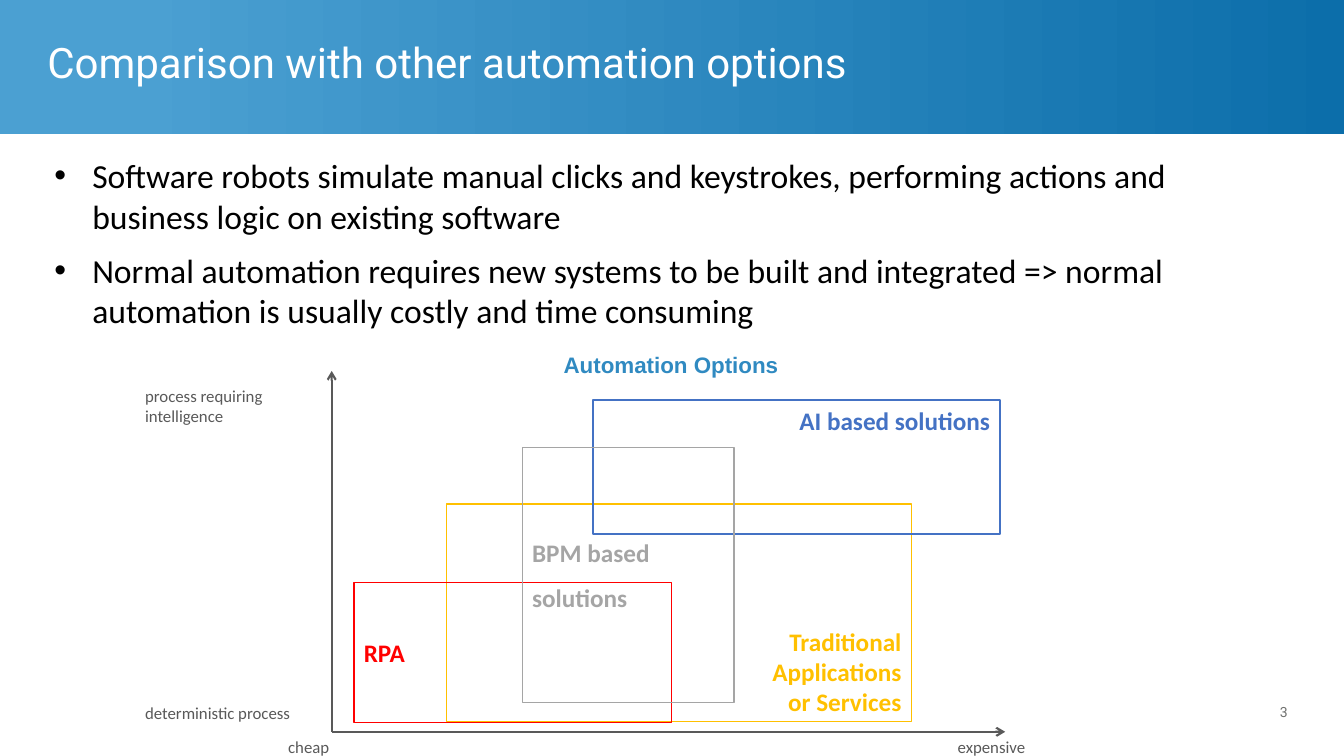
from dataclasses import dataclass

from lxml import etree
from pptx import Presentation
from pptx.dml.color import RGBColor
from pptx.enum import shapes, text
from pptx.oxml import ns
from pptx.util import Inches, Pt

WHITE, BLACK, GREY = "FFFFFF", "000000", "595959"
LEFT, CENTER, RIGHT = text.PP_ALIGN.LEFT, text.PP_ALIGN.CENTER, text.PP_ALIGN.RIGHT
TOP, MIDDLE, BOTTOM = text.MSO_ANCHOR.TOP, text.MSO_ANCHOR.MIDDLE, text.MSO_ANCHOR.BOTTOM
ORIGIN = (3.29, 7.26)


@dataclass
class Label:
    text: str
    box: tuple[float, float, float, float]
    size: int = 12
    color: str = GREY
    font: str = "Calibri"
    bold: bool = False
    align: text.PP_ALIGN = LEFT
    anchor: text.MSO_ANCHOR = TOP
    wrap: bool = False


@dataclass
class Option:
    text: str
    box: tuple[float, float, float, float]
    color: str
    align: text.PP_ALIGN
    anchor: text.MSO_ANCHOR


OPTIONS = [
    Option("Traditional\nApplications\nor Services", (4.43, 5, 4.61, 2.16), "FFC000", RIGHT, BOTTOM),
    Option("AI based solutions", (5.88, 3.97, 4.04, 1.33), "4472C4", RIGHT, TOP),
    Option("RPA", (3.51, 5.78, 3.15, 1.39), "FF0000", LEFT, MIDDLE),
    Option("BPM based\nsolutions", (5.18, 4.44, 2.1, 2.53), "A5A5A5", LEFT, MIDDLE),
]

LABELS = [
    Label("Automation Options", (5.48, 3.43, 2.35, 0.37), 16, "308AC1", "Arial", True, CENTER),
    Label("expensive", (9.4, 7.26, 1.05, 0.36)),
    Label("cheap", (2.76, 7.26, 0.73, 0.36)),
    Label("deterministic process", (1.34, 6.92, 2.05, 0.36), wrap=True),
    Label("process requiring intelligence", (1.34, 3.78, 2.05, 0.6), wrap=True),
    Label("3", (9.87, 6.86, 3, 0.4), 10, "6F706E", "Roboto", align=RIGHT, anchor=MIDDLE, wrap=True),
]

BULLETS = [
    "Software robots simulate manual clicks and keystrokes, performing actions and "
    "business logic on existing software",
    "Normal automation requires new systems to be built and integrated => normal "
    "automation is usually costly and time consuming",
]


def rgb(color: str) -> RGBColor:
    return RGBColor.from_string(color)


def place(shape, box: tuple[float, float, float, float]) -> None:
    shape.left, shape.top, shape.width, shape.height = map(Inches, box)


def write(shape, content: str, size: int, color: str, font: str = "Calibri",
          bold: bool = False, align: text.PP_ALIGN = LEFT,
          anchor: text.MSO_ANCHOR = TOP, wrap: bool = True) -> None:
    """Fill the shape with text, one paragraph per line, all in one style."""
    frame = shape.text_frame
    frame.text = content
    frame.word_wrap = wrap
    frame.auto_size = text.MSO_AUTO_SIZE.NONE
    frame.vertical_anchor = anchor
    for paragraph in frame.paragraphs:
        paragraph.alignment = align
        for run in paragraph.runs:
            run.font.name, run.font.size, run.font.bold = font, Pt(size), bold
            run.font.color.rgb = rgb(color)


def add_rectangle(slide, box: tuple[float, float, float, float]):
    rectangle = slide.shapes.add_shape(shapes.MSO_SHAPE.RECTANGLE, *map(Inches, box))
    rectangle.shadow.inherit = False
    return rectangle


def add_banner(slide) -> None:
    banner = add_rectangle(slide, (0, 0, 13.33, 1.33))
    banner.line.fill.background()
    banner.fill.gradient()
    banner.fill.gradient_angle = 0
    stops = [(0.1, "4BA0D2"), (1, "0C6EAA")]
    for stop, (position, color) in zip(banner.fill.gradient_stops, stops):
        stop.position = position
        stop.color.rgb = rgb(color)
    slide.shapes._spTree.insert(2, banner._element)  # behind the title


def add_option(slide, option: Option) -> None:
    rectangle = add_rectangle(slide, option.box)
    rectangle.fill.background()
    rectangle.line.color.rgb = rgb(option.color)
    rectangle.line.width = Pt(1)
    write(rectangle, option.text, 18, option.color, bold=True,
          align=option.align, anchor=option.anchor)


def add_axis(slide, end: tuple[float, float]) -> None:
    axis = slide.shapes.add_connector(
        shapes.MSO_CONNECTOR.STRAIGHT, *map(Inches, ORIGIN + end))
    axis.line.color.rgb = rgb(GREY)
    axis.line.width = Pt(1.5)
    etree.SubElement(axis.line._get_or_add_ln(), ns.qn("a:tailEnd"), type="arrow")
    etree.SubElement(axis._element.spPr, ns.qn("a:effectLst"))


def add_label(slide, label: Label) -> None:
    box = slide.shapes.add_textbox(*map(Inches, label.box))
    write(box, label.text, label.size, label.color, label.font, label.bold,
          label.align, label.anchor, label.wrap)


def main() -> None:
    presentation = Presentation()
    presentation.slide_width, presentation.slide_height = Inches(13.33), Inches(7.5)
    slide = presentation.slides.add_slide(presentation.slide_layouts[1])
    add_banner(slide)

    title, body = slide.shapes.title, slide.placeholders[1]
    place(title, (0.37, 0.02, 12.5, 1.24))
    write(title, "Comparison with other automation options", 30, WHITE, "Roboto", anchor=MIDDLE)
    title.text_frame.paragraphs[0].line_spacing = 0.9
    place(body, (0.44, 1.49, 12.44, 5.75))
    write(body, "\n".join(BULLETS), 24, BLACK)
    for paragraph in body.text_frame.paragraphs:
        paragraph.space_before = Pt(10)

    traditional, *other_options = OPTIONS
    add_option(slide, traditional)
    for end in [(ORIGIN[0], 3.68), (9.97, ORIGIN[1])]:
        add_axis(slide, end)
    for label in LABELS:
        add_label(slide, label)
    for option in other_options:
        add_option(slide, option)
    bpm = slide.shapes[-1]
    bpm.text_frame.paragraphs[1].line_spacing = 1.5

    presentation.save("out.pptx")


if __name__ == "__main__":
    main()
